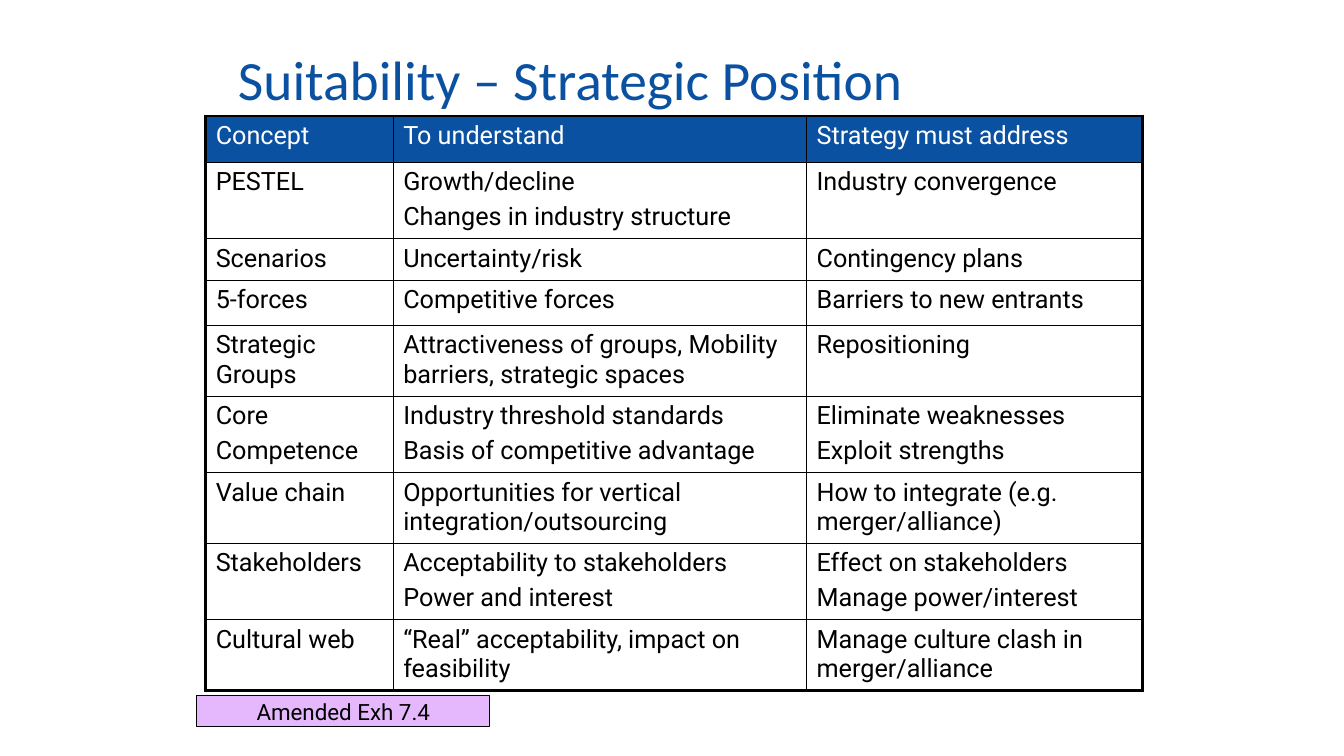
import pptx
import pptx.dml.color
import pptx.enum.shapes
import pptx.enum.text
import pptx.oxml
import pptx.oxml.ns
import pptx.util

Inches, Pt = pptx.util.Inches, pptx.util.Pt
ANCHOR, ALIGN = pptx.enum.text.MSO_ANCHOR, pptx.enum.text.PP_ALIGN
BLUE, BLACK, WHITE, LILAC = "0B51A1", "000000", "FFFFFF", "E5B8FE"
THIN, THICK = 1, 2.25

COLUMNS = [1.86, 4.1, 3.33]
ROWS = [
    (0.46, "Concept", "To understand", "Strategy must address"),
    (0.76, "PESTEL", "Growth/decline\nChanges in industry structure", "Industry convergence"),
    (0.41, "Scenarios", "Uncertainty/risk", "Contingency plans"),
    (0.45, "5-forces", "Competitive forces", "Barriers to new entrants"),
    (0.7, "Strategic Groups", "Attractiveness of groups, Mobility barriers, strategic spaces",
     "Repositioning"),
    (0.76, "Core\nCompetence", "Industry threshold standards\nBasis of competitive advantage",
     "Eliminate weaknesses\nExploit strengths"),
    (0.7, "Value chain", "Opportunities for vertical integration/outsourcing",
     "How to integrate (e.g. merger/alliance)"),
    (0.76, "Stakeholders", "Acceptability to stakeholders\nPower and interest",
     "Effect on stakeholders\nManage power/interest"),
    (0.7, "Cultural web", "“Real” acceptability, impact on feasibility",
     "Manage culture clash in merger/alliance"),
]


def rgb(value):
    return pptx.dml.color.RGBColor.from_string(value)


def set_font(p, name, size, color):
    p.font.name, p.font.size = name, Pt(size)
    p.font.color.rgb = rgb(color)


def add_title(s, text):
    sp = s.shapes.title
    sp.left, sp.top, sp.width, sp.height = map(Inches, (2.26, 0.46, 9, 0.71))
    tf = sp.text_frame
    tf.text = text
    tf.word_wrap = True
    tf.auto_size = pptx.enum.text.MSO_AUTO_SIZE.NONE
    tf.vertical_anchor = ANCHOR.MIDDLE
    p = tf.paragraphs[0]
    p.alignment, p.line_spacing = ALIGN.LEFT, 0.9
    set_font(p, "Calibri", 39.6, BLUE)


def set_borders(cell, widths):
    """Draw black cell borders; widths are points for left, right, top, bottom."""
    tcPr = cell._tc.get_or_add_tcPr()
    for side, width in zip("LRTB", widths):
        tcPr.append(pptx.oxml.parse_xml(
            f'<a:ln{side} {pptx.oxml.ns.nsdecls("a")} w="{Pt(width)}"><a:solidFill>'
            f'<a:srgbClr val="{BLACK}"/></a:solidFill></a:ln{side}>'))


def fill_cell(cell, text, header):
    cell.text = text
    if header:
        cell.fill.solid()
        cell.fill.fore_color.rgb = rgb(BLUE)
    else:
        cell.fill.background()
    for p in cell.text_frame.paragraphs:
        p.space_before = Pt(3.6)
        p.font.bold = False
        set_font(p, "Roboto", 18, WHITE if header else BLACK)


def add_concept_table(s):
    heights = [row[0] for row in ROWS]
    table = s.shapes.add_table(
        len(ROWS), len(COLUMNS), Inches(2.04), Inches(1.15),
        Inches(sum(COLUMNS)), Inches(sum(heights))).table
    table.horz_banding = False
    for column, width in zip(table.columns, COLUMNS):
        column.width = Inches(width)
    last_row, last_col = len(ROWS) - 1, len(COLUMNS) - 1
    for i, (height, *texts) in enumerate(ROWS):
        table.rows[i].height = Inches(height)
        for j, text in enumerate(texts):
            cell = table.cell(i, j)
            outer = (j == 0, j == last_col, i == 0, i == last_row)
            set_borders(cell, [THICK if edge else THIN for edge in outer])
            fill_cell(cell, text, header=i == 0)


def add_label(s, text):
    sp = s.shapes.add_shape(pptx.enum.shapes.MSO_SHAPE.RECTANGLE,
                            *map(Inches, (1.95, 6.9, 2.91, 0.31)))
    sp.shadow.inherit = False
    sp.fill.solid()
    sp.fill.fore_color.rgb = rgb(LILAC)
    sp.line.color.rgb = rgb(BLACK)
    sp.line.width = Pt(0.75)
    tf = sp.text_frame
    tf.text = text
    tf.word_wrap = False
    tf.vertical_anchor = ANCHOR.MIDDLE
    p = tf.paragraphs[0]
    p.alignment = ALIGN.CENTER
    set_font(p, "Roboto", 16, BLACK)


def main():
    prs = pptx.Presentation()
    prs.slide_width, prs.slide_height = Inches(13.33), Inches(7.5)
    s = prs.slides.add_slide(prs.slide_layouts[5])
    add_title(s, "Suitability – Strategic Position")
    add_concept_table(s)
    add_label(s, "Amended Exh 7.4")
    prs.save("out.pptx")


if __name__ == "__main__":
    main()
